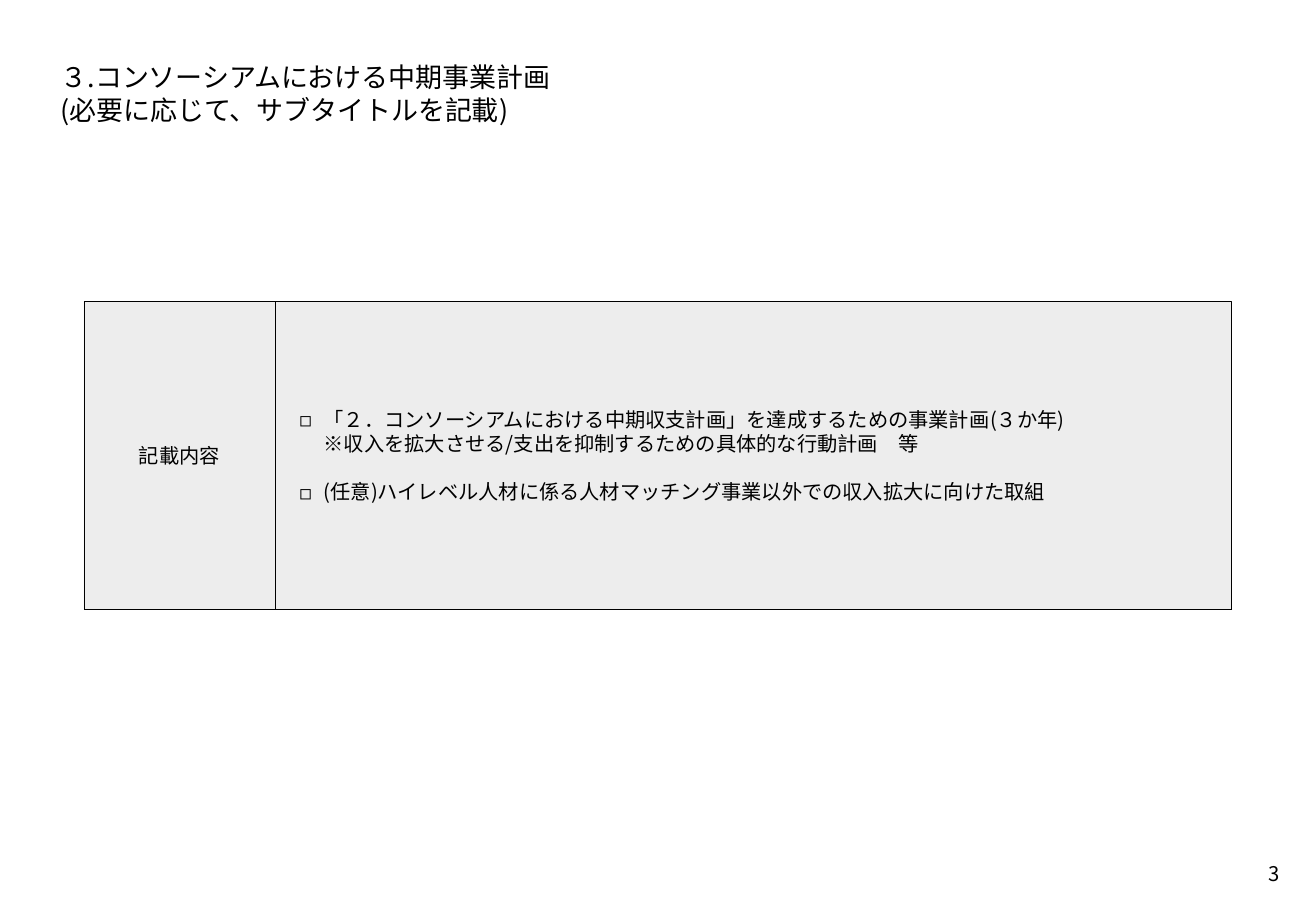
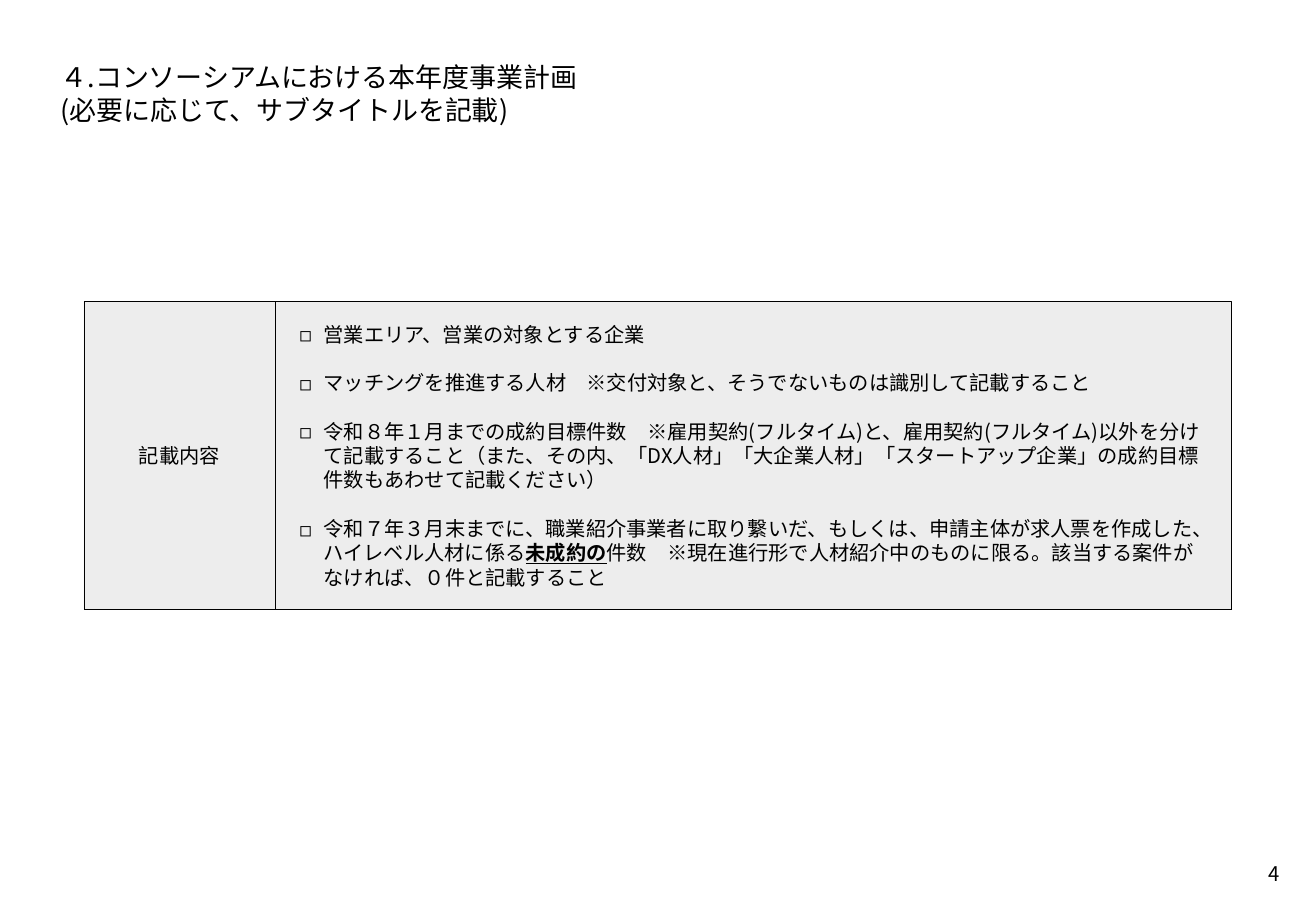
from lxml import etree
from pptx import Presentation
from pptx import util as u
from pptx.dml.color import RGBColor
from pptx.enum import dml, shapes, text
from pptx.oxml.ns import qn

W, H = 10.83, 7.5
FONT = "Noto Sans CJK JP"
BLACK, GREY, WHITE = "000000", "EDEDED", "FFFFFF"
BODY_PT, TITLE_PT = 12, 16
LEADING = 1.2                      # line pitch as a multiple of the text size
INDENT = 0.2
MARGIN = 0.3
PLAN_BOX = (0.69, 2.48, 9.44, 2.54)
LABEL_SHARE = 1 / 6                # label column's share of the plan box

SUBTITLE = "(必要に応じて、サブタイトルを記載)"
# Each item is a list of (text, emphasised) runs
PLANS = [
    (3, "３.コンソーシアムにおける中期事業計画", [
        [("「２．コンソーシアムにおける中期収支計画」を達成するための事業計画(３か年)\n"
          "※収入を拡大させる/支出を抑制するための具体的な行動計画　等", False)],
        [("(任意)ハイレベル人材に係る人材マッチング事業以外での収入拡大に向けた取組", False)],
    ]),
    (4, "４.コンソーシアムにおける本年度事業計画", [
        [("営業エリア、営業の対象とする企業", False)],
        [("マッチングを推進する人材　※交付対象と、そうでないものは識別して記載すること", False)],
        [("令和８年１月までの成約目標件数　※雇用契約(フルタイム)と、雇用契約(フルタイム)以外を"
          "分けて記載すること（また、その内、「DX人材」「大企業人材」「スタートアップ企業」の"
          "成約目標件数もあわせて記載ください）", False)],
        [("令和７年３月末までに、職業紹介事業者に取り繋いだ、もしくは、申請主体が求人票を"
          "作成した、ハイレベル人材に係る", False),
         ("未成約の", True),
         ("件数　※現在進行形で人材紹介中のものに限る。該当する案件がなければ、"
          "０件と記載すること", False)],
    ]),
]


def rgb(value):
    return RGBColor.from_string(value)


def set_frame(tf, inset, anchor=text.MSO_ANCHOR.TOP, wrap=True):
    tf.word_wrap = wrap
    tf.vertical_anchor = anchor
    tf.margin_left = tf.margin_right = u.Inches(inset)
    tf.margin_top = tf.margin_bottom = u.Inches(inset)


def add_run(p, words, size, strong=False):
    r = p.add_run()
    r.text = words
    f = r.font
    f.name, f.size = FONT, u.Pt(size)
    f.color.rgb = rgb(BLACK)
    if strong:
        f.bold = f.underline = True
    ea = etree.Element(qn("a:ea"), typeface=FONT)
    r._r.rPr.find(qn("a:latin")).addnext(ea)


def write(p, runs, size=BODY_PT, align=text.PP_ALIGN.LEFT):
    p.alignment = align
    p.line_spacing = u.Pt(size * LEADING)
    for words, strong in runs:
        for i, line in enumerate(words.split("\n")):
            if i:
                p.add_line_break()
            add_run(p, line, size, strong)


def set_bullet(p):
    pPr = p._p.get_or_add_pPr()
    pPr.set("marL", str(u.Inches(INDENT)))
    pPr.set("indent", str(-u.Inches(INDENT)))
    etree.SubElement(pPr, qn("a:buFont"), typeface=FONT)
    etree.SubElement(pPr, qn("a:buChar"), char="◻")


def add_text(s, box, words, size, inset, **frame):
    align = frame.pop("align", text.PP_ALIGN.LEFT)
    tf = s.shapes.add_textbox(*map(u.Inches, box)).text_frame
    set_frame(tf, inset, **frame)
    write(tf.paragraphs[0], [(words, False)], size, align)


def add_cell(group, box, inset):
    sp = group.shapes.add_shape(shapes.MSO_SHAPE.RECTANGLE, *map(u.Inches, box))
    sp.shadow.inherit = False
    sp.fill.solid()
    sp.fill.fore_color.rgb = rgb(GREY)
    sp.line.color.rgb = rgb(BLACK)
    sp.line.width = u.Pt(0.25)
    sp.line.dash_style = dml.MSO_LINE.ROUND_DOT
    set_frame(sp.text_frame, inset, text.MSO_ANCHOR.MIDDLE)
    return sp.text_frame


def add_plan(s, box, items):
    x, y, w, h = box
    label_w = w * LABEL_SHARE
    group = s.shapes.add_group_shape()
    # Checklist
    tf = add_cell(group, (x + label_w, y, w - label_w, h), 0.2)
    for i, runs in enumerate(items):
        p = tf.add_paragraph() if i else tf.paragraphs[0]
        write(p, runs)
        if i:
            p.space_before = u.Pt(BODY_PT * LEADING)
        set_bullet(p)
    # Label
    tf = add_cell(group, (x, y, label_w, h), 0.1)
    write(tf.paragraphs[0], [("記載内容", False)], align=text.PP_ALIGN.CENTER)


def plan_slide(prs, number, title, items):
    s = prs.slides.add_slide(prs.slide_layouts[6])
    s.background.fill.solid()
    s.background.fill.fore_color.rgb = rgb(WHITE)
    # Title and page number
    add_text(s, (MARGIN, MARGIN, W - 2 * MARGIN, 0.79),
             title + "\n" + SUBTITLE, TITLE_PT, 0.2)
    add_text(s, (10.24, 6.99, 0.39, 0.39), str(number), BODY_PT, 0.1,
             wrap=False, align=text.PP_ALIGN.RIGHT)
    add_plan(s, PLAN_BOX, items)


def main():
    prs = Presentation()
    prs.slide_width, prs.slide_height = u.Inches(W), u.Inches(H)
    for plan in PLANS:
        plan_slide(prs, *plan)
    prs.save("out.pptx")


if __name__ == "__main__":
    main()
